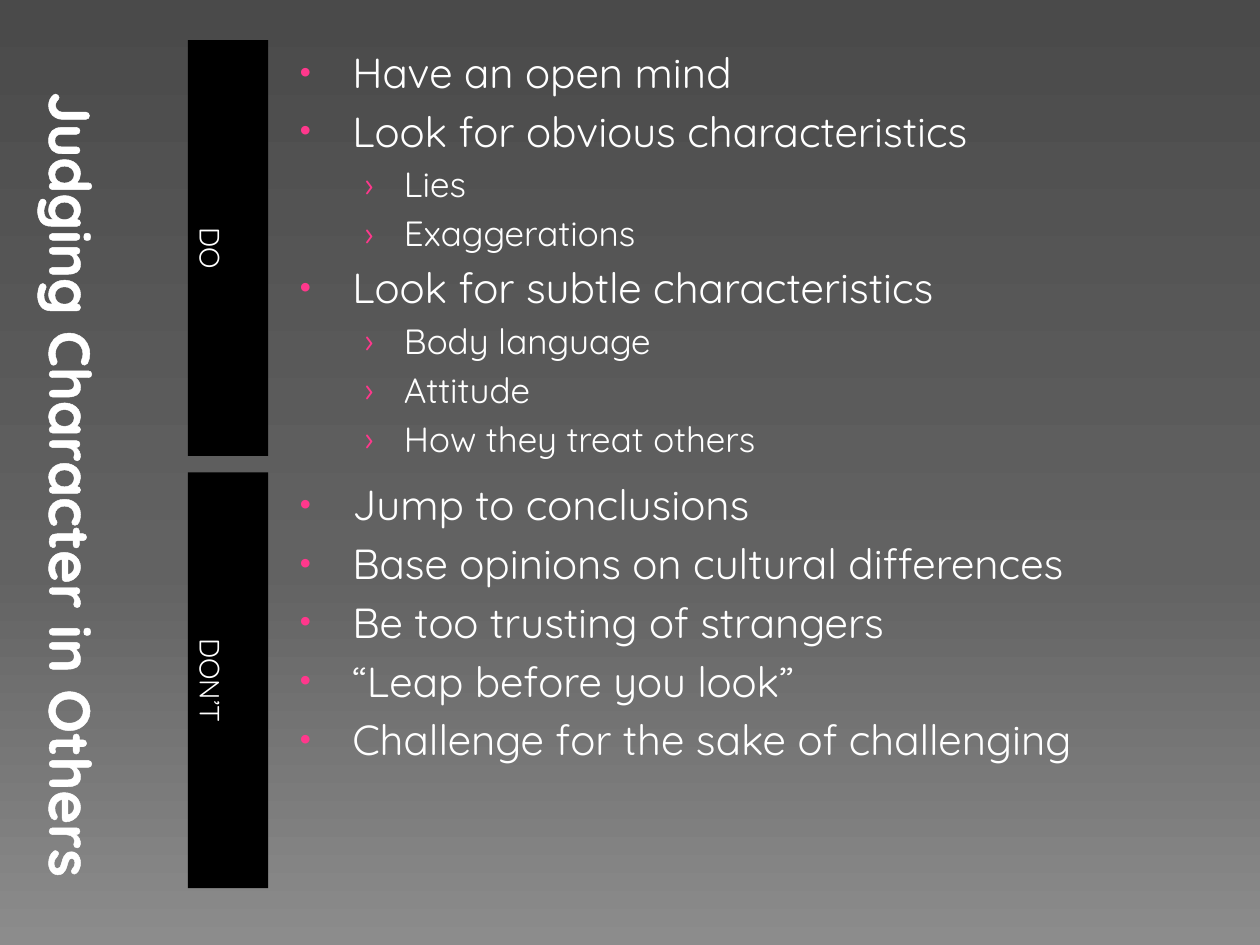
from dataclasses import dataclass

from lxml.etree import fromstring
from pptx import Presentation
from pptx.dml.color import RGBColor
from pptx.enum.shapes import MSO_SHAPE
from pptx.enum.text import MSO_ANCHOR, MSO_AUTO_SIZE, PP_ALIGN
from pptx.oxml.ns import nsdecls, qn
from pptx.slide import Slide
from pptx.text.text import TextFrame, _Paragraph
from pptx.util import Pt

FONT = "Quicksand"
WHITE = "FFFFFF"
BLACK = "000000"
PINK = "FF388C"
GRADIENT = ((0, "4A4A4A"), (60, "626262"), (100, "8C8C8C"))
TOP, LABEL_LEFT, LABEL_WIDTH = 23, 107.3, 46
TITLE_LEFT, TITLE_WIDTH, TITLE_HEIGHT = 19.4, 84.2, 484.6
LIST_LEFT, LIST_WIDTH = 159, 540
SECTION_HEIGHT, SECTION_PITCH = 237.6, 247
INSET = 3.6


@dataclass(frozen=True)
class Level:
    size: float
    margin: float
    indent: float
    bullet: str
    bullet_percent: int


@dataclass(frozen=True)
class Section:
    label: str
    items: tuple[tuple[int, str], ...]


LEVELS = (
    Level(24, 35.3, -30.2, "•", 80),
    Level(20, 64.8, -22.3, "›", 95),
)
SECTIONS = (
    Section("DO", (
        (0, "Have an open mind"),
        (0, "Look for obvious characteristics"),
        (1, "Lies"),
        (1, "Exaggerations"),
        (0, "Look for subtle characteristics"),
        (1, "Body language"),
        (1, "Attitude"),
        (1, "How they treat others"),
    )),
    Section("DON’T", (
        (0, "Jump to conclusions"),
        (0, "Base opinions on cultural differences"),
        (0, "Be too trusting of strangers"),
        (0, "“Leap before you look”"),
        (0, "Challenge for the sake of challenging"),
    )),
)


def color(value: str) -> RGBColor:
    return RGBColor.from_string(value)


def set_background(slide: Slide) -> None:
    fill = slide.background.fill
    fill.gradient()
    fill.gradient_angle = 270
    stop_list = slide.background._cSld.find(".//" + qn("a:gsLst"))
    for stop in list(stop_list):
        stop_list.remove(stop)
    for position, value in GRADIENT:
        stop_list.append(fromstring(
            f'<a:gs {nsdecls("a")} pos="{position * 1000}">'
            f'<a:srgbClr val="{value}"/></a:gs>'))


def format_font(paragraph: _Paragraph, size: float, bold: bool = False) -> None:
    font = paragraph.font
    font.name, font.size, font.bold = FONT, Pt(size), bold
    font.color.rgb = color(WHITE)


def write_centered(frame: TextFrame, text: str, size: float, bold: bool = False) -> None:
    frame.text = text
    frame.word_wrap = True
    frame.auto_size = MSO_AUTO_SIZE.NONE
    frame.vertical_anchor = MSO_ANCHOR.BOTTOM
    frame.margin_left = frame.margin_right = Pt(0)
    frame.margin_top = frame.margin_bottom = Pt(0)
    paragraph = frame.paragraphs[0]
    paragraph.alignment = PP_ALIGN.CENTER
    format_font(paragraph, size, bold)


def format_title(slide: Slide) -> None:
    title = slide.shapes.title
    shift = (TITLE_HEIGHT - TITLE_WIDTH) / 2
    title.left, title.top = Pt(TITLE_LEFT - shift), Pt(TOP + shift)
    title.width, title.height = Pt(TITLE_HEIGHT), Pt(TITLE_WIDTH)
    title.rotation = 90
    frame = title.text_frame
    write_centered(frame, "Judging Character in Others", 33, True)
    frame.margin_left, frame.margin_bottom = Pt(23), Pt(2)
    run = frame.paragraphs[0].runs[0]
    run._r.get_or_add_rPr().insert(0, fromstring(
        f'<a:ln {nsdecls("a")} w="6350"><a:solidFill>'
        f'<a:srgbClr val="{WHITE}"/></a:solidFill></a:ln>'))


def add_label(slide: Slide, text: str, top: float) -> None:
    label = slide.shapes.add_shape(
        MSO_SHAPE.RECTANGLE, Pt(LABEL_LEFT), Pt(top), Pt(LABEL_WIDTH), Pt(SECTION_HEIGHT))
    label.shadow.inherit = False
    label.fill.solid()
    label.fill.fore_color.rgb = color(BLACK)
    label.line.fill.background()
    frame = label.text_frame
    write_centered(frame, text, 16)
    frame.margin_left = Pt(INSET)
    frame._txBody.bodyPr.set("vert", "vert")


def format_item(paragraph: _Paragraph, text: str, depth: int) -> None:
    level = LEVELS[depth]
    paragraph.text = text
    paragraph.level = depth
    paragraph.space_before = Pt(level.size * 0.2)
    format_font(paragraph, level.size)
    properties = paragraph._p.get_or_add_pPr()
    properties.set("marL", str(Pt(level.margin)))
    properties.set("indent", str(Pt(level.indent)))
    bullet = fromstring(
        f'<a:pPr {nsdecls("a")}><a:buClr><a:srgbClr val="{PINK}"/></a:buClr>'
        f'<a:buSzPct val="{level.bullet_percent * 1000}"/>'
        f'<a:buFont typeface="{FONT}"/><a:buChar char="{level.bullet}"/></a:pPr>')
    defaults = properties.find(qn("a:defRPr"))
    for element in list(bullet):
        defaults.addprevious(element)


def add_list(slide: Slide, section: Section, top: float) -> None:
    box = slide.shapes.add_textbox(Pt(LIST_LEFT), Pt(top), Pt(LIST_WIDTH), Pt(SECTION_HEIGHT))
    frame = box.text_frame
    frame.word_wrap = True
    for index, (depth, text) in enumerate(section.items):
        paragraph = frame.add_paragraph() if index else frame.paragraphs[0]
        format_item(paragraph, text, depth)


def main() -> None:
    presentation = Presentation()
    presentation.slide_width, presentation.slide_height = Pt(720), Pt(540)
    slide = presentation.slides.add_slide(presentation.slide_layouts[5])
    set_background(slide)
    format_title(slide)
    for index, section in enumerate(SECTIONS):
        top = TOP + index * SECTION_PITCH
        add_label(slide, section.label, top)
        add_list(slide, section, top)
    presentation.save("out.pptx")


if __name__ == "__main__":
    main()
